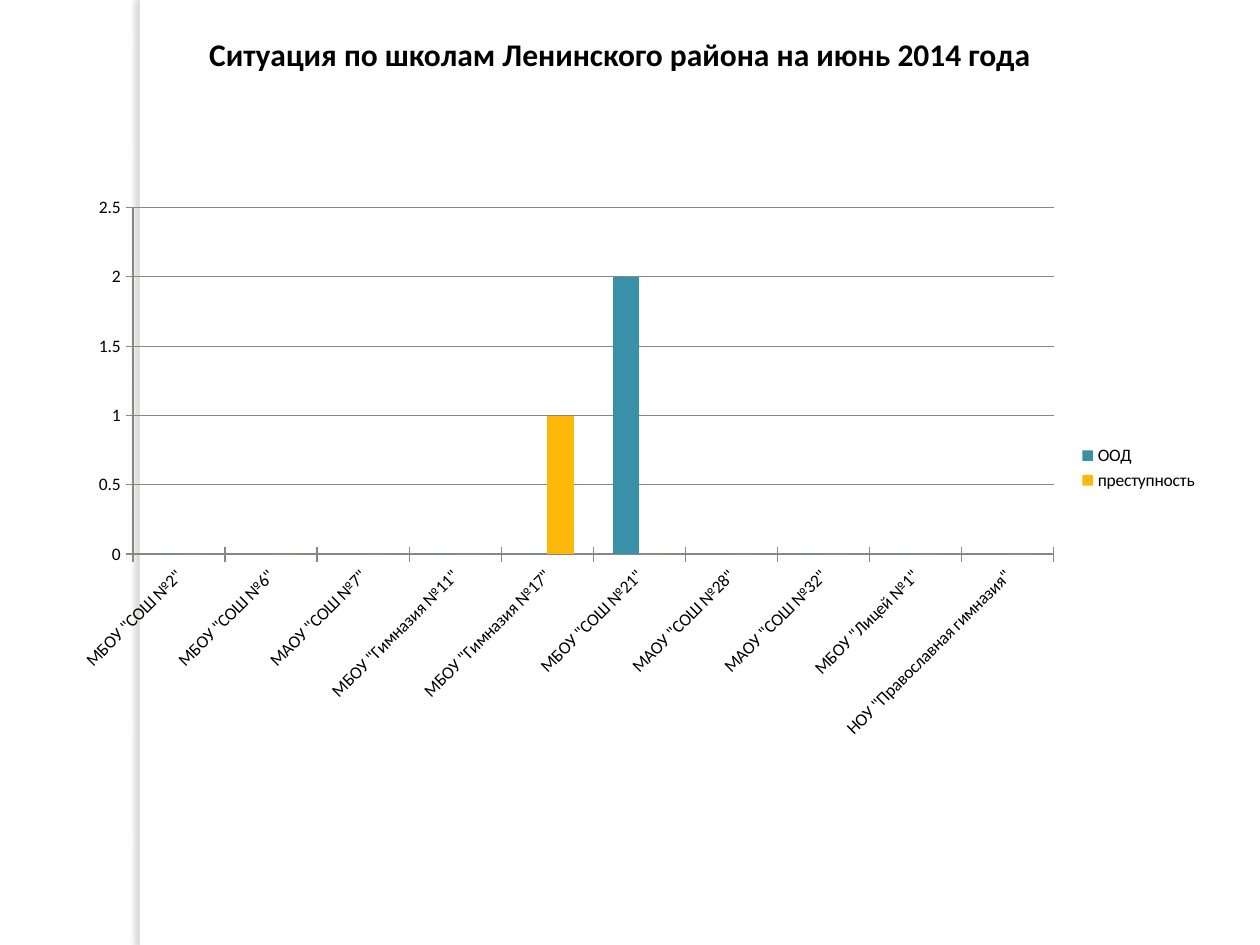
"""Build a slide charting incidents by school in the Leninsky district."""
from dataclasses import dataclass

from lxml.etree import SubElement
from pptx import Presentation
from pptx.chart.data import CategoryChartData
from pptx.dml.color import RGBColor
from pptx.enum.chart import XL_CHART_TYPE, XL_LEGEND_POSITION, XL_TICK_MARK
from pptx.enum.shapes import MSO_SHAPE
from pptx.enum.text import MSO_ANCHOR, MSO_AUTO_SIZE, PP_ALIGN
from pptx.oxml.ns import qn
from pptx.util import Inches, Pt

WIDTH, HEIGHT = Inches(10), Inches(7.5)
FONT = "Calibri"
BLACK = RGBColor(0x00, 0x00, 0x00)
WHITE = RGBColor(0xFF, 0xFF, 0xFF)
GRAY = RGBColor(0x87, 0x87, 0x87)
TEAL = RGBColor(0x38, 0x91, 0xA7)
AMBER = RGBColor(0xFE, 0xB8, 0x0A)
SHADOW = RGBColor(0x73, 0x6F, 0x63)


@dataclass(frozen=True)
class Box:
    """Position and size in inches."""
    left: float
    top: float
    width: float
    height: float

    def lengths(self):
        """Return the four values as slide lengths."""
        return [Inches(value) for value in (self.left, self.top, self.width, self.height)]


@dataclass(frozen=True)
class Indicator:
    """A chart series whose unlisted schools count zero."""
    name: str
    color: RGBColor
    counts: dict[str, int]


SCHOOLS = [
    'МБОУ "СОШ №2"', 'МБОУ "СОШ №6"', 'МАОУ "СОШ №7"',
    'МБОУ "Гимназия №11"', 'МБОУ "Гимназия №17"', 'МБОУ "СОШ №21"',
    'МАОУ "СОШ №28"', 'МАОУ "СОШ №32"', 'МБОУ "Лицей №1"',
    'НОУ "Православная гимназия"',
]
INDICATORS = [
    Indicator("ООД", TEAL, {'МБОУ "СОШ №21"': 2}),
    Indicator("преступность", AMBER, {'МБОУ "Гимназия №17"': 1}),
]


def add_side_strip(slide, box: Box) -> None:
    """Add the white vertical strip that casts a soft shadow to the left."""
    strip = slide.shapes.add_shape(MSO_SHAPE.RECTANGLE, *box.lengths())
    strip.fill.solid()
    strip.fill.fore_color.rgb = WHITE
    strip.line.fill.background()
    strip.shadow.inherit = False
    effects = strip._element.spPr.find(qn("a:effectLst"))
    shadow = SubElement(effects, qn("a:outerShdw"), blurRad=str(Pt(3)),
                        dist=str(Pt(3)), dir="10800000", algn="tl", rotWithShape="0")
    color = SubElement(shadow, qn("a:srgbClr"), val=str(SHADOW))
    SubElement(color, qn("a:alpha"), val="25000")


def write_text(shape, text: str, *, size: float, color: RGBColor, bold: bool = False) -> None:
    """Write one left-aligned paragraph into a shape."""
    frame = shape.text_frame
    frame.word_wrap = True
    frame.auto_size = MSO_AUTO_SIZE.SHAPE_TO_FIT_TEXT
    frame.vertical_anchor = MSO_ANCHOR.TOP
    paragraph = frame.paragraphs[0]
    paragraph.alignment = PP_ALIGN.LEFT
    run = paragraph.add_run()
    run.text = text
    run.font.name = FONT
    run.font.size = Pt(size)
    run.font.bold = bold
    run.font.color.rgb = color


def add_school_chart(slide, box: Box, indicators: list[Indicator]) -> None:
    """Add the clustered columns comparing the schools."""
    data = CategoryChartData()
    data.categories = SCHOOLS
    for indicator in indicators:
        data.add_series(indicator.name, [indicator.counts.get(school, 0) for school in SCHOOLS])
    chart = slide.shapes.add_chart(XL_CHART_TYPE.COLUMN_CLUSTERED, *box.lengths(), data).chart
    chart.has_title = False
    chart.font.name = FONT
    chart.font.size = Pt(10)
    chart.font.color.rgb = BLACK
    chart.has_legend = True
    chart.legend.position = XL_LEGEND_POSITION.RIGHT
    chart.legend.include_in_layout = False
    for axis in (chart.category_axis, chart.value_axis):
        axis.major_tick_mark = XL_TICK_MARK.CROSS
        axis.format.line.color.rgb = GRAY
    chart.value_axis.has_major_gridlines = True
    chart.value_axis.major_gridlines.format.line.color.rgb = GRAY
    plot = chart.plots[0]
    plot.vary_by_categories = False
    plot.gap_width = 150
    plot.overlap = 0
    for series, indicator in zip(plot.series, indicators):
        series.format.fill.solid()
        series.format.fill.fore_color.rgb = indicator.color


def main() -> None:
    """Assemble and save the presentation."""
    presentation = Presentation()
    presentation.slide_width, presentation.slide_height = WIDTH, HEIGHT
    slide = presentation.slides.add_slide(presentation.slide_layouts[5])
    title = slide.shapes.title
    title.left, title.top, title.width, title.height = Box(1.56, 0.23, 7.97, 0.4).lengths()
    write_text(title, "Ситуация по школам Ленинского района на июнь 2014 года",
               size=18, color=BLACK, bold=True)
    add_side_strip(slide, Box(1.11, 0, 0.08, 7.5))
    add_school_chart(slide, Box(0.47, 1.48, 9.14, 4.47), INDICATORS)
    presentation.save("out.pptx")


if __name__ == "__main__":
    main()
